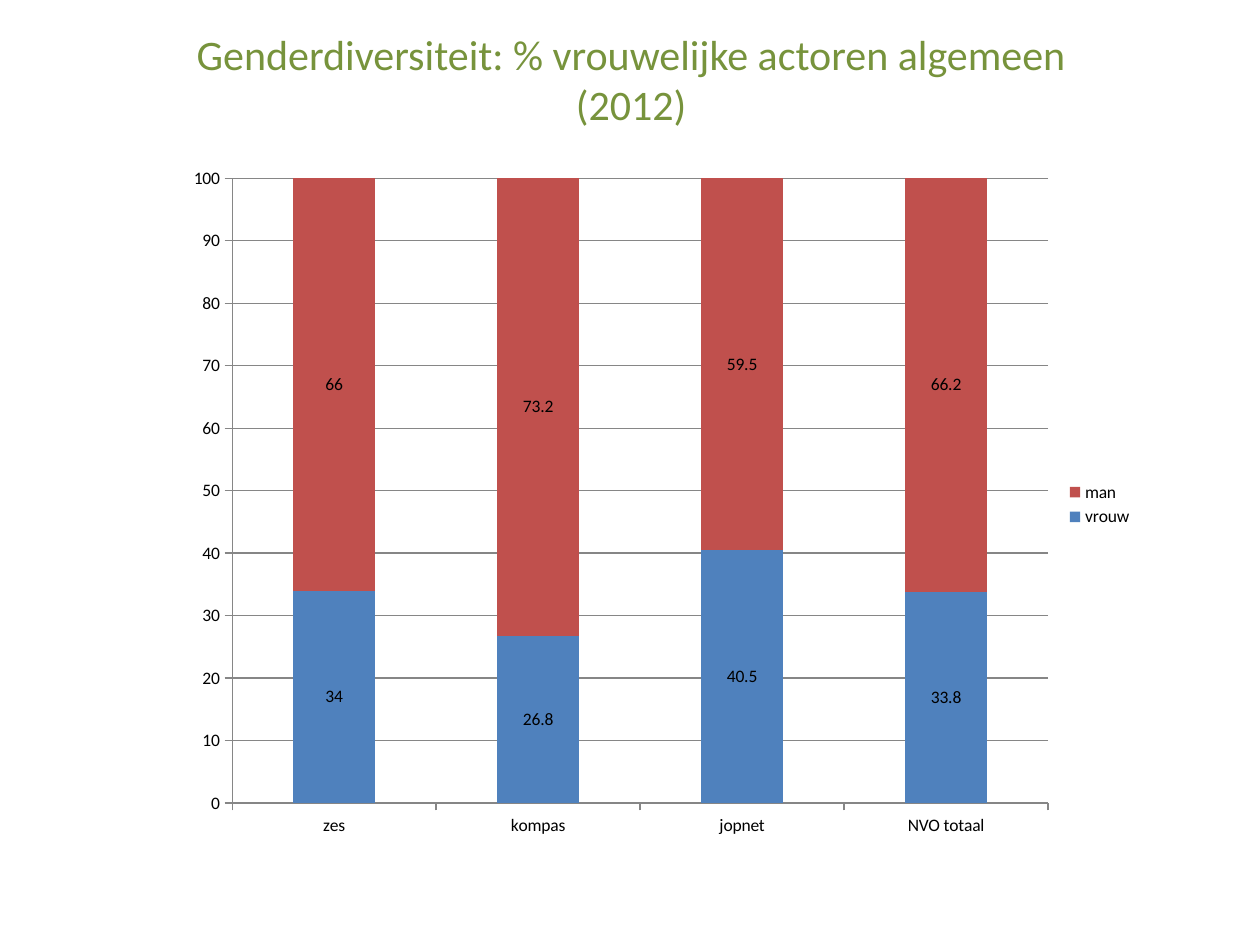
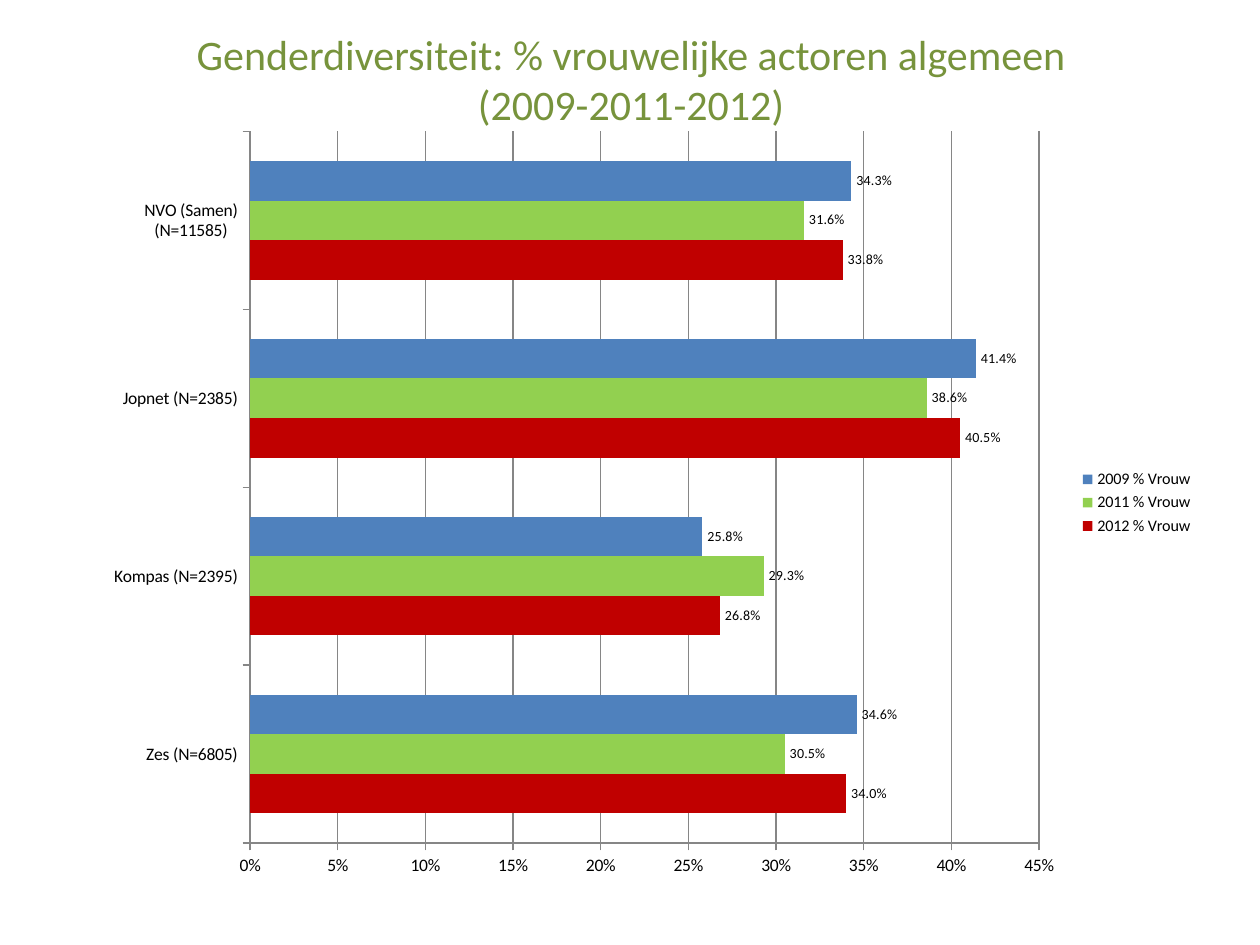
from lxml import etree
from pptx import Presentation
from pptx.chart.data import CategoryChartData
from pptx.dml.color import RGBColor
from pptx.enum.chart import XL_CHART_TYPE, XL_LABEL_POSITION, XL_LEGEND_POSITION, XL_TICK_MARK
from pptx.enum.text import MSO_ANCHOR, MSO_AUTO_SIZE, PP_ALIGN
from pptx.oxml.ns import qn
from pptx.util import Inches, Pt

FONT = "Calibri"
GREEN, BLACK, GREY = "77933C", "000000", "868686"
BLUE, RED, LIME, DARK_RED = "4F81BD", "C0504D", "92D050", "C00000"
TITLE_BOX = (0.51, 0, 9, 1.25)
TITLE_START = "Genderdiversiteit: % vrouwelijke actoren algemeen"


def rgb(hex_colour):
    return RGBColor.from_string(hex_colour)


def style_font(font, size, colour=BLACK):
    font.name, font.size = FONT, Pt(size)
    font.color.rgb = rgb(colour)


def write_text(frame, text, size=24, colour=GREEN, align=PP_ALIGN.CENTER, anchor=MSO_ANCHOR.MIDDLE):
    frame.text = text
    frame.word_wrap = True
    frame.auto_size = MSO_AUTO_SIZE.NONE
    frame.vertical_anchor = anchor
    for paragraph in frame.paragraphs:
        paragraph.alignment = align
        for run in paragraph.runs:
            style_font(run.font, size, colour)


def add_titled_slide(prs, years):
    slide = prs.slides.add_slide(prs.slide_layouts[5])
    title = slide.shapes.title
    title.left, title.top, title.width, title.height = map(Inches, TITLE_BOX)
    write_text(title.text_frame, f"{TITLE_START}\n({years})")
    return slide


def place_plot(chart, **fractions):
    """Fix the inner plot area, as fractions of the chart frame."""
    plot_area = chart._chartSpace.chart.plotArea
    for old_layout in plot_area.findall(qn("c:layout")):
        plot_area.remove(old_layout)
    layout = etree.Element(qn("c:layout"))
    manual = etree.SubElement(layout, qn("c:manualLayout"))
    settings = {"layoutTarget": "inner", "xMode": "edge", "yMode": "edge", **fractions}
    for tag, value in settings.items():
        etree.SubElement(manual, qn(f"c:{tag}")).set("val", str(value))
    plot_area.insert(0, layout)


def format_axes(chart, top, step, number_format):
    values = chart.value_axis
    values.minimum_scale, values.maximum_scale, values.major_unit = 0, top, step
    values.has_major_gridlines = True
    values.major_gridlines.format.line.color.rgb = rgb(GREY)
    values.major_gridlines.format.line.width = Pt(0.75)
    values.tick_labels.number_format = number_format
    values.tick_labels.number_format_is_linked = False
    for axis in (chart.category_axis, values):
        axis.major_tick_mark = XL_TICK_MARK.OUTSIDE
        axis.minor_tick_mark = XL_TICK_MARK.NONE
        axis.format.line.color.rgb = rgb(GREY)
        axis.format.line.width = Pt(0.75)
        style_font(axis.tick_labels.font, 10)


def add_bars(slide, kind, box, categories, series, plot, axis,
             label_format, label_position, label_size=10, legend_size=10):
    """Draw a bar chart; series holds (name, values, colour)."""
    data = CategoryChartData(number_format=label_format)
    data.categories = categories
    for name, values, _ in series:
        data.add_series(name, values)
    chart = slide.shapes.add_chart(kind, *map(Inches, box), data).chart
    chart.has_title = False
    style_font(chart.font, 10)
    place_plot(chart, **plot)
    format_axes(chart, *axis)

    # Bars and their values
    bars = chart.plots[0]
    bars.gap_width = 150
    bars.vary_by_categories = False
    for bar_series, (_, _, colour) in zip(bars.series, series):
        bar_series.format.fill.solid()
        bar_series.format.fill.fore_color.rgb = rgb(colour)
        bar_series.invert_if_negative = False
        labels = bar_series.data_labels
        labels.show_value = True
        labels.number_format = label_format
        labels.number_format_is_linked = False
        labels.position = label_position
        style_font(labels.font, label_size)

    # Legend
    chart.has_legend = True
    chart.legend.position = XL_LEGEND_POSITION.RIGHT
    chart.legend.include_in_layout = False
    style_font(chart.legend.font, legend_size)
    return chart


def main():
    prs = Presentation()
    prs.slide_width, prs.slide_height = Inches(10), Inches(7.5)

    # Share of women and men per channel in 2012
    add_bars(
        add_titled_slide(prs, "2012"), XL_CHART_TYPE.COLUMN_STACKED, (1.38, 1.25, 7.71, 5.51),
        ["zes", "kompas", "jopnet", "NVO totaal"],
        [("vrouw", (34, 26.8, 40.5, 33.8), BLUE),
         ("man", (66, 73.2, 59.5, 66.2), RED)],
        plot=dict(x=0.06, y=0.03, w=0.84, h=0.9), axis=(100, 10, "General"),
        label_format="General", label_position=XL_LABEL_POSITION.CENTER)

    # Share of women per channel across three years
    add_bars(
        add_titled_slide(prs, "2009-2011-2012"), XL_CHART_TYPE.BAR_CLUSTERED, (0.75, 0.92, 8.82, 6.14),
        ["Zes (N=6805)", "Kompas (N=2395)", "Jopnet (N=2385)", "NVO (Samen) (N=11585)"],
        [("2012 % Vrouw", (0.34, 0.268, 0.405, 0.338), DARK_RED),
         ("2011 % Vrouw", (0.305, 0.293, 0.386, 0.316), LIME),
         ("2009 % Vrouw", (0.346, 0.258, 0.414, 0.343), BLUE)],
        plot=dict(x=0.14, y=0.02, w=0.71, h=0.92), axis=(0.45, 0.05, "0%"),
        label_format="0.0%", label_position=XL_LABEL_POSITION.OUTSIDE_END,
        label_size=8, legend_size=9.2)

    prs.save("out.pptx")


if __name__ == "__main__":
    main()
